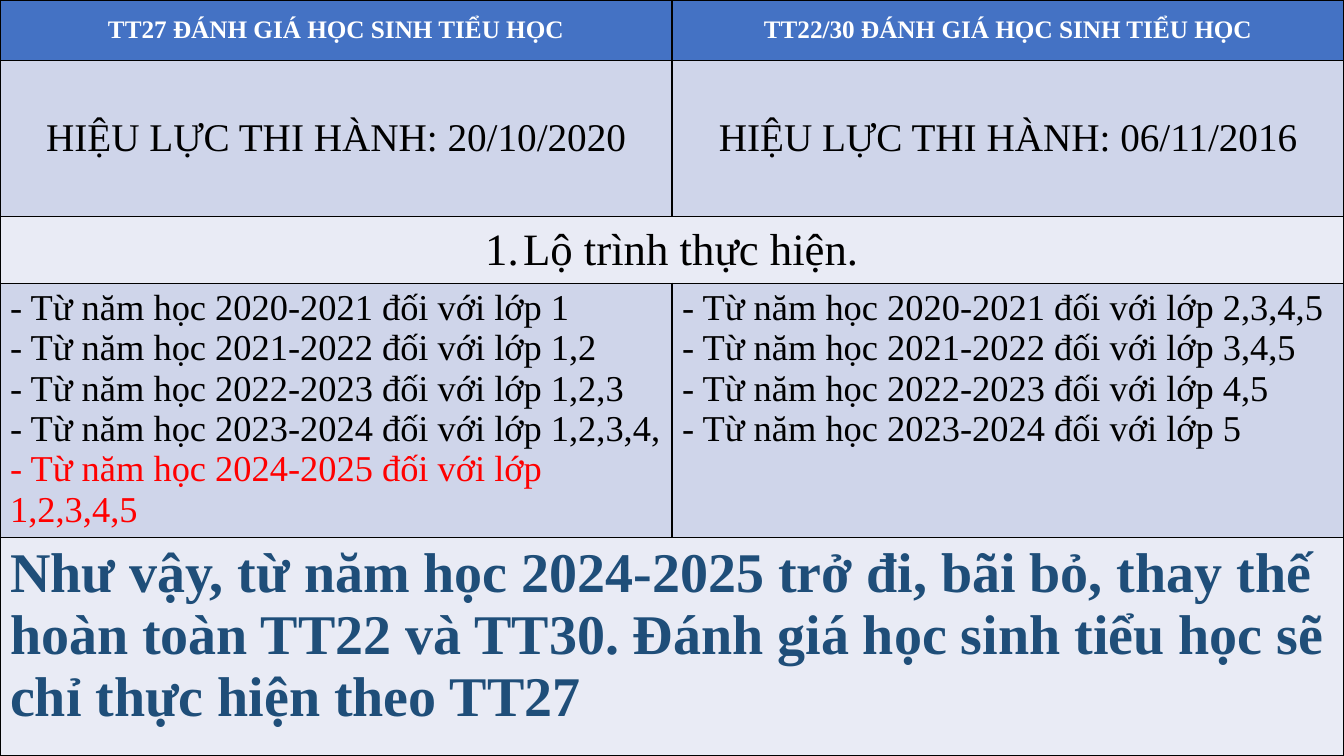
from lxml import etree
from pptx import Presentation
from pptx.dml.color import RGBColor
from pptx.enum.text import MSO_ANCHOR as Anchor, PP_ALIGN as Align
from pptx.oxml.ns import qn
from pptx.util import Pt

FONT = "Times New Roman"
HEADER_BLUE, BAND_DARK, BAND_LIGHT = "4472C4", "CFD5EA", "E9EBF5"
WHITE, BLACK, RED, NAVY = "FFFFFF", "000000", "FF0000", "1F4E79"


def color(hex_value):
    return RGBColor.from_string(hex_value)


def add_borders(cell):
    properties = cell._tc.get_or_add_tcPr()
    for index, side in enumerate(("lnL", "lnR", "lnT", "lnB")):
        line = etree.Element(qn(f"a:{side}"), w=str(Pt(1)))
        fill = etree.SubElement(line, qn("a:solidFill"))
        etree.SubElement(fill, qn("a:srgbClr"), val=BLACK)
        properties.insert(index, line)


school_years = ["2020-2021", "2021-2022", "2022-2023", "2023-2024", "2024-2025"]
new_grades = ["1", "1,2", "1,2,3", "1,2,3,4,", "1,2,3,4,5"]
old_grades = ["2,3,4,5", "3,4,5", "4,5", "5"]
new_schedule, old_schedule = [
    "\n".join(f"- Từ năm học {year} đối với lớp {grade}" for year, grade in zip(school_years, grades))
    for grades in (new_grades, old_grades)
]
conclusion = (
    "Như vậy, từ năm học 2024-2025 trở đi, bãi bỏ, thay thế hoàn toàn TT22 và TT30. "
    "Đánh giá học sinh tiểu học sẽ chỉ thực hiện theo TT27"
)

rows = [
    (43.2, HEADER_BLUE, 18, WHITE, True, True,
     ["TT27 ĐÁNH GIÁ HỌC SINH TIỂU HỌC", "TT22/30 ĐÁNH GIÁ HỌC SINH TIỂU HỌC"]),
    (111.6, BAND_DARK, 28, BLACK, False, True,
     ["HIỆU LỰC THI HÀNH: 20/10/2020", "HIỆU LỰC THI HÀNH: 06/11/2016"]),
    (47.5, BAND_LIGHT, 32, BLACK, False, True, ["Lộ trình thực hiện."]),
    (181.4, BAND_DARK, 26, BLACK, False, False, [new_schedule, old_schedule]),
    (156.2, BAND_LIGHT, 40, NAVY, True, False, [conclusion]),
]

presentation = Presentation()
presentation.slide_width = Pt(960)
presentation.slide_height = Pt(540)
slide = presentation.slides.add_slide(presentation.slide_layouts[6])

table_height = sum(row[0] for row in rows)
table = slide.shapes.add_table(len(rows), 2, Pt(0), Pt(0), Pt(960), Pt(table_height)).table

for row_index, (height, fill, size, text_color, bold, centered, texts) in enumerate(rows):
    table.rows[row_index].height = Pt(height)
    if len(texts) == 1:
        table.cell(row_index, 0).merge(table.cell(row_index, 1))
    for column_index in range(2):
        cell = table.cell(row_index, column_index)
        cell.fill.solid()
        cell.fill.fore_color.rgb = color(fill)
        add_borders(cell)
        if cell.is_spanned:
            continue
        cell.text_frame.text = texts[column_index]
        cell.vertical_anchor = Anchor.MIDDLE if centered else Anchor.TOP
        for paragraph in cell.text_frame.paragraphs:
            paragraph.alignment = Align.CENTER if centered else Align.LEFT
            for run in paragraph.runs:
                run.font.name = FONT
                run.font.size = Pt(size)
                run.font.bold = bold
                run.font.color.rgb = color(text_color)

final_year = table.cell(3, 0).text_frame.paragraphs[-1]
final_year.runs[0].font.color.rgb = color(RED)

heading = table.cell(2, 0).text_frame.paragraphs[0]
heading_properties = heading._p.get_or_add_pPr()
heading_properties.set("marL", str(Pt(27)))
heading_properties.set("indent", str(Pt(-27)))
etree.SubElement(heading_properties, qn("a:buFont"), typeface=FONT)
etree.SubElement(heading_properties, qn("a:buAutoNum"), type="arabicPeriod")

presentation.save("out.pptx")
